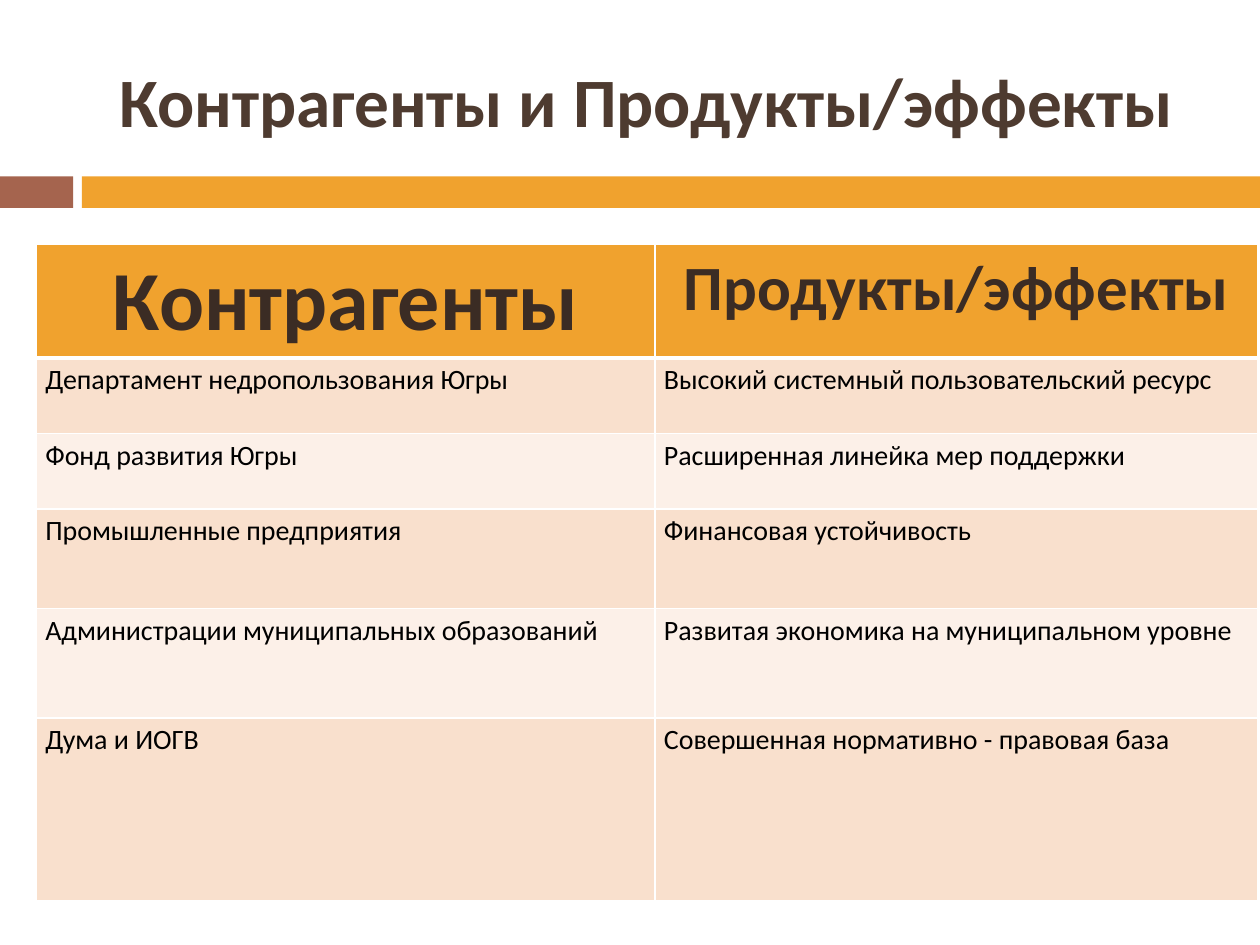
from dataclasses import dataclass

from lxml import etree
from pptx import Presentation
from pptx.dml.color import RGBColor
from pptx.enum import shapes, text
from pptx.oxml import ns
from pptx.util import Inches, Pt


@dataclass(frozen=True)
class Theme:
    font: str = "Calibri"
    amber: str = "F0A22E"
    brick: str = "A5644E"
    title: str = "4E3B30"
    header: str = "3B2C24"
    body: str = "000000"
    border: str = "FFFFFF"
    bands: tuple = ("F9E0CD", "FCF0E8")
    title_size: float = 39.6
    header_sizes: tuple = (48, 36)
    body_size: float = 16


THEME = Theme()
HEADERS = ("Контрагенты", "Продукты/эффекты")
ROWS = (
    ("Департамент недропользования Югры", "Высокий системный пользовательский ресурс"),
    ("Фонд развития Югры", "Расширенная линейка мер поддержки"),
    ("Промышленные предприятия", "Финансовая устойчивость"),
    ("Администрации муниципальных образований", "Развитая экономика на муниципальном уровне"),
    ("Дума и ИОГВ", "Совершенная нормативно - правовая база"),
)
COLUMN_WIDTHS = (4.91, 4.78)
ROW_HEIGHTS = (0.87, 0.6, 0.6, 0.79, 0.87, 1.45)


def apply_format(target, values):
    for name, value in values.items():
        setattr(target, name, value)


def write_text(frame, content, size, color, bold=False, **paragraph_format):
    paragraph = frame.paragraphs[0]
    apply_format(paragraph, paragraph_format)
    run = paragraph.add_run()
    run.text = content
    apply_format(run.font, {"name": THEME.font, "size": Pt(size), "bold": bold})
    run.font.color.rgb = RGBColor.from_string(color)


def fill_solid(target, color):
    target.fill.solid()
    target.fill.fore_color.rgb = RGBColor.from_string(color)


def set_borders(cell, **widths):
    properties = cell._tc.get_or_add_tcPr()
    for side, width in widths.items():
        line = etree.SubElement(properties, ns.qn(f"a:ln{side}"), w=str(Pt(width)))
        solid = etree.SubElement(line, ns.qn("a:solidFill"))
        etree.SubElement(solid, ns.qn("a:srgbClr"), val=THEME.border)


def add_title(slide, left, top, width, height):
    box = slide.shapes.add_textbox(Inches(left), Inches(top), Inches(width), Inches(height))
    frame = box.text_frame
    apply_format(frame, {"word_wrap": True, "vertical_anchor": text.MSO_ANCHOR.MIDDLE})
    write_text(frame, "Контрагенты и Продукты/эффекты", THEME.title_size, THEME.title,
               bold=True, alignment=text.PP_ALIGN.CENTER)


def add_divider(slide, left, top, width, height):
    accent_width, gap = 0.58, 0.07
    bar_offset = accent_width + gap
    bars = ((0, accent_width, THEME.brick), (bar_offset, width - bar_offset, THEME.amber))
    for offset, bar_width, color in bars:
        bar = slide.shapes.add_shape(shapes.MSO_SHAPE.RECTANGLE, Inches(left + offset),
                                     Inches(top), Inches(bar_width), Inches(height))
        bar.shadow.inherit = False
        bar.line.fill.background()
        fill_solid(bar, color)


def add_partner_table(slide, left, top, width, height):
    table = slide.shapes.add_table(len(ROWS) + 1, len(HEADERS), Inches(left), Inches(top),
                                   Inches(width), Inches(height)).table
    for column, column_width in zip(table.columns, COLUMN_WIDTHS):
        column.width = Inches(column_width)
    for row, row_height in zip(table.rows, ROW_HEIGHTS):
        row.height = Inches(row_height)

    # Header row with a heavy rule below it
    for index, content in enumerate(HEADERS):
        cell = table.cell(0, index)
        set_borders(cell, L=1, R=1, T=1, B=3)
        fill_solid(cell, THEME.amber)
        write_text(cell.text_frame, content, THEME.header_sizes[index], THEME.header,
                   bold=True, alignment=text.PP_ALIGN.CENTER)

    # Banded body rows
    margins = {"margin_left": Inches(0.07), "margin_right": Inches(0.07),
               "margin_top": 0, "margin_bottom": 0}
    for row_index, contents in enumerate(ROWS):
        for column_index, content in enumerate(contents):
            cell = table.cell(row_index + 1, column_index)
            apply_format(cell, margins)
            set_borders(cell, L=1, R=1, T=1 if row_index else 3, B=1)
            fill_solid(cell, THEME.bands[row_index % 2])
            write_text(cell.text_frame, content, THEME.body_size, THEME.body,
                       line_spacing=1.15)


def main():
    presentation = Presentation()
    apply_format(presentation, {"slide_width": Inches(10), "slide_height": Inches(7.5)})
    slide = presentation.slides.add_slide(presentation.slide_layouts[6])
    add_divider(slide, 0, 1.4, 10, 0.25)
    add_title(slide, 0.67, 0.25, 8.92, 1.08)
    add_partner_table(slide, 0.29, 1.94, sum(COLUMN_WIDTHS), sum(ROW_HEIGHTS))
    presentation.save("out.pptx")


if __name__ == "__main__":
    main()
